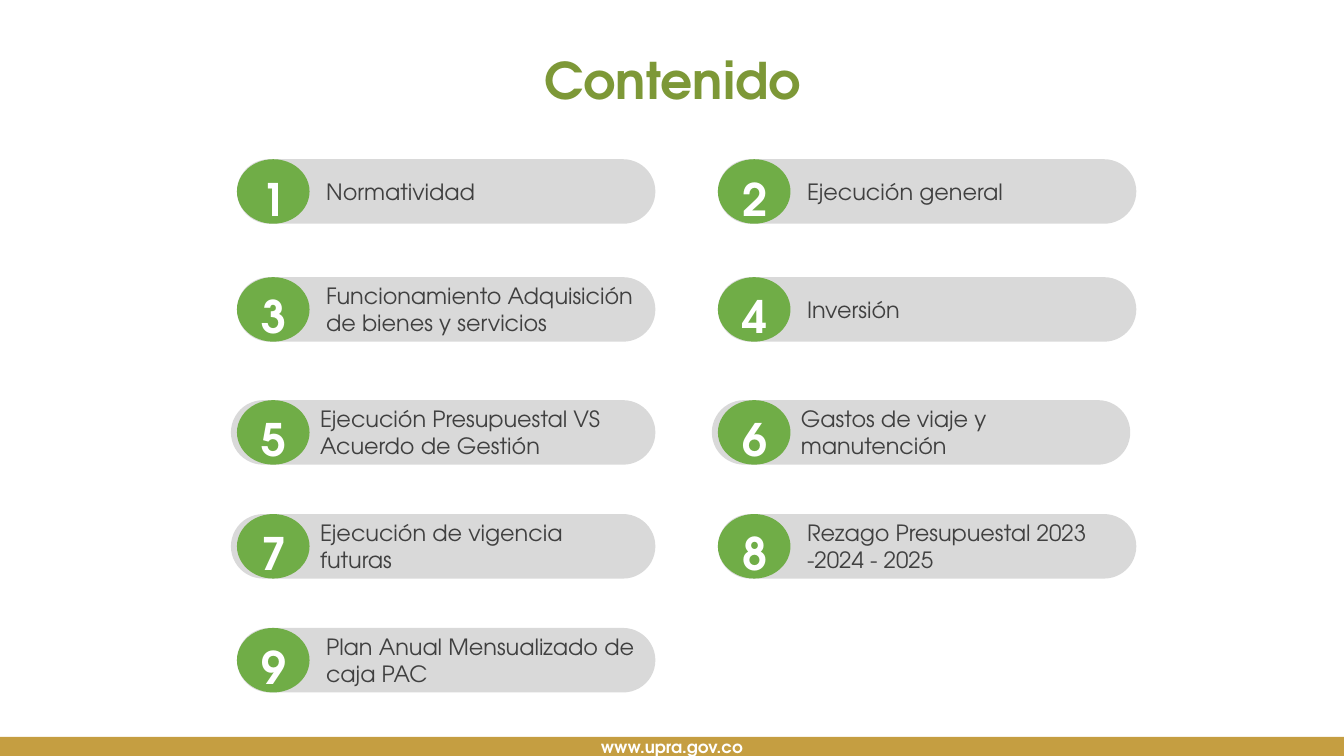
from dataclasses import dataclass

import pptx
import pptx.util
import pptx.dml.color
import pptx.enum.shapes
import pptx.enum.text

Inches = pptx.util.Inches
SHAPE = pptx.enum.shapes.MSO_SHAPE
ANCHOR = pptx.enum.text.MSO_ANCHOR
ALIGN = pptx.enum.text.PP_ALIGN
AUTO = pptx.enum.text.MSO_AUTO_SIZE


@dataclass(frozen=True)
class Theme:
    font: str = "TeX Gyre Adventor"
    title: str = "7D9837"
    pill: str = "D9D9D9"
    badge: str = "70AD47"
    footer: str = "C59E41"
    text: str = "404040"
    light: str = "FFFFFF"
    title_size: int = 36
    number_size: int = 32
    item_size: int = 16
    footer_size: int = 12


@dataclass(frozen=True)
class Item:
    text: str
    outset: float = 0     # how far the pill starts left of its badge
    width: float = 4.15


THEME = Theme()
COLUMNS = (2.35, 7.12)
ROWS = (1.58, 2.75, 3.97, 5.1, 6.23)
PILL_H = 0.64
BADGE_W = 0.72
ITEMS = (
    Item("Normatividad"),
    Item("Ejecución general"),
    Item("Funcionamiento Adquisición de bienes y servicios"),
    Item("Inversión"),
    Item("Ejecución Presupuestal VS Acuerdo de Gestión", 0.06, 4.21),
    Item("Gastos de viaje y manutención", 0.06),
    Item("Ejecución de vigencia futuras", 0.06, 4.21),
    Item("Rezago Presupuestal 2023 -2024 - 2025"),
    Item("Plan Anual Mensualizado de caja PAC"),
)


def rgb(color: str) -> pptx.dml.color.RGBColor:
    return pptx.dml.color.RGBColor.from_string(color)


def write(s, text: str, size: int, color: str, bold: bool = False,
          align=ALIGN.CENTER, **frame) -> None:
    """Put one formatted paragraph in a shape; frame holds text frame values."""
    tf = s.text_frame
    for name, value in {"word_wrap": True, **frame}.items():
        setattr(tf, name, value)
    p = tf.paragraphs[0]
    p.alignment = align
    r = p.add_run()
    r.text = text
    fmt = {"name": THEME.font, "size": pptx.util.Pt(size), "bold": bold}
    for name, value in fmt.items():
        setattr(r.font, name, value)
    r.font.color.rgb = rgb(color)


def add_filled(shapes, kind, x: float, y: float, w: float, h: float, color: str):
    s = shapes.add_shape(kind, Inches(x), Inches(y), Inches(w), Inches(h))
    s.shadow.inherit = False
    s.fill.solid()
    s.fill.fore_color.rgb = rgb(color)
    s.line.fill.background()
    return s


def add_item(sld, number: int, item: Item, x: float, y: float) -> None:
    shapes = sld.shapes.add_group_shape().shapes
    pill = add_filled(shapes, SHAPE.ROUNDED_RECTANGLE, x - item.outset, y,
                      item.width, PILL_H, THEME.pill)
    pill.adjustments[0] = 0.5
    write(pill, item.text, THEME.item_size, THEME.text, align=ALIGN.LEFT,
          vertical_anchor=ANCHOR.MIDDLE, margin_left=Inches(0.79))
    add_filled(shapes, SHAPE.OVAL, x, y, BADGE_W, PILL_H, THEME.badge)
    label = shapes.add_textbox(Inches(x - 0.06), Inches(y + 0.07),
                               Inches(0.85), Inches(0.57))
    write(label, str(number), THEME.number_size, THEME.light, bold=True,
          auto_size=AUTO.SHAPE_TO_FIT_TEXT)


def main() -> None:
    prs = pptx.Presentation()
    prs.slide_width, prs.slide_height = Inches(13.33), Inches(7.5)
    sld = prs.slides.add_slide(prs.slide_layouts[5])

    # Title
    title = sld.shapes.title
    title.left, title.top = Inches(2.1), Inches(0.51)
    title.width, title.height = Inches(9.14), Inches(1.19)
    write(title, "Contenido", THEME.title_size, THEME.title, bold=True,
          vertical_anchor=ANCHOR.TOP, auto_size=AUTO.NONE)
    title.text_frame.paragraphs[0].line_spacing = 0.9

    # Footer band
    footer = add_filled(sld.shapes, SHAPE.RECTANGLE, 0, 7.31, 13.33, 0.19, THEME.footer)
    write(footer, "www.upra.gov.co", THEME.footer_size, THEME.light, bold=True,
          vertical_anchor=ANCHOR.MIDDLE)

    # Numbered contents, row by row
    for i, item in enumerate(ITEMS):
        row, col = divmod(i, len(COLUMNS))
        add_item(sld, i + 1, item, COLUMNS[col], ROWS[row])

    prs.save("out.pptx")


if __name__ == "__main__":
    main()
